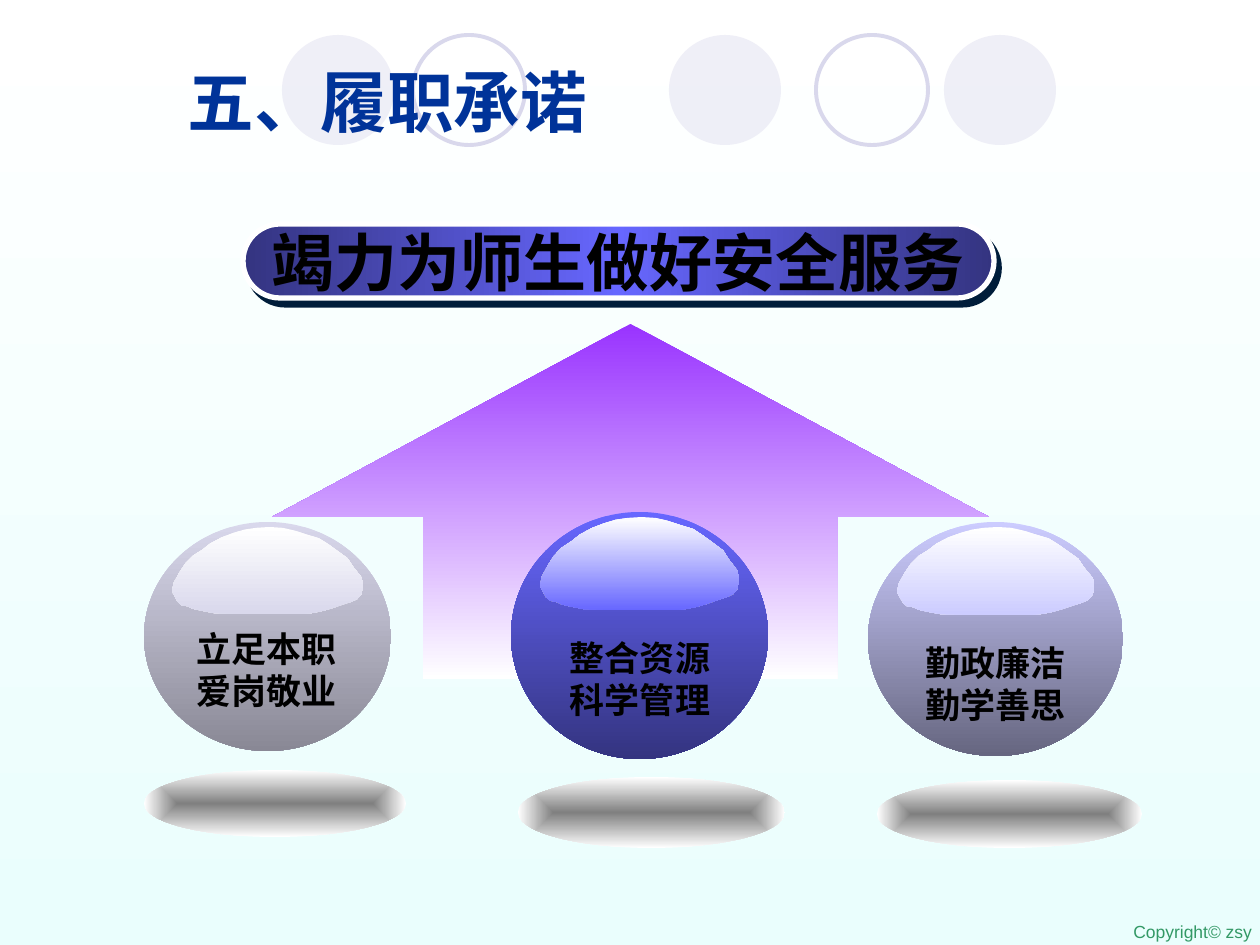
from dataclasses import dataclass
from typing import NamedTuple

from lxml.etree import SubElement
from pptx import Presentation
from pptx.dml.color import RGBColor as RGB
from pptx.enum.shapes import MSO_SHAPE as SHAPE
from pptx.enum.text import MSO_ANCHOR as ANCHOR, MSO_AUTO_SIZE as AUTO_SIZE, PP_ALIGN as ALIGN
from pptx.oxml.ns import qn
from pptx.util import Emu, Pt

EMU_PER_PX = 914400 / 126


@dataclass(frozen=True)
class Theme:
    latin: str = "Arial"
    chinese: str = "Noto Sans CJK SC"
    title_size: int = 38
    banner_size: int = 36
    label_size: int = 20
    footer_size: int = 10
    title: str = "003399"
    text: str = "000000"
    footer: str = "339966"
    circle: str = "D9D8EC"
    white: str = "FFFFFF"
    banner_shadow: str = "001D3A"
    background: tuple = ("FFFFFF", "EAFEFD")
    banner: tuple = ("343480", "6767FF", "343480")
    arrow: tuple = ("9933FF", "FFFFFF")
    floor_shadow: tuple = ("808080", "FFFFFF")
    grey_ball: tuple = ("D9D8EC", "898895")
    blue_ball: tuple = ("6767FF", "343480")
    lilac_ball: tuple = ("CCCCFF", "666680")


THEME = Theme()


class Box(NamedTuple):
    left: int
    top: int
    width: int
    height: int

    def inner(self, left, top, width, height):
        return Box(self.left + left, self.top + top, width, height)

    def emu(self):
        return [px(length) for length in self]


# Highlight outline, in percent of its box
GLOSS = [
    (99, 57), (100, 62), (100, 72), (99, 78), (97, 83), (94, 86), (91, 88), (87, 91),
    (83, 94), (78, 97), (73, 99), (68, 100), (36, 100), (22, 99), (15, 96), (11, 94),
    (8, 91), (5, 90), (3, 86), (1, 78), (0, 74), (1, 64), (4, 52), (7, 42),
    (11, 33), (16, 26), (20, 19), (26, 12), (32, 7), (38, 3), (44, 1), (51, 0),
    (58, 1), (64, 4), (71, 9), (77, 13), (82, 20), (87, 28), (92, 36), (95, 46),
]


def px(length):
    return Emu(round(length * EMU_PER_PX))


def set_gradient(fill, element, colors, angle=90, from_center=False):
    """Spread the colors evenly along an angle or outward from the centre."""
    fill.gradient()
    gradient = element.find(".//" + qn("a:gradFill"))
    for child in list(gradient):
        gradient.remove(child)
    stops = SubElement(gradient, qn("a:gsLst"))
    for index, color in enumerate(colors):
        position = round(100000 * index / (len(colors) - 1))
        stop = SubElement(stops, qn("a:gs"), pos=str(position))
        SubElement(stop, qn("a:srgbClr"), val=color)
    if from_center:
        center = SubElement(gradient, qn("a:path"), path="shape")
        SubElement(center, qn("a:fillToRect"), l="50000", t="50000", r="50000", b="50000")
    else:
        SubElement(gradient, qn("a:lin"), ang=str(angle * 60000), scaled="0")


def plain(shape):
    shape.shadow.inherit = False
    shape.line.fill.background()
    return shape


def add_gradient_shape(slide, kind, box, colors, **direction):
    shape = plain(slide.shapes.add_shape(kind, *box.emu()))
    set_gradient(shape.fill, shape._element, colors, **direction)
    return shape


def write(frame, lines, size, color, font=THEME.latin, bold=True, align=ALIGN.LEFT):
    frame.text = "\n".join(lines)
    for paragraph in frame.paragraphs:
        paragraph.alignment = align
        paragraph.font.size = Pt(size)
        paragraph.font.bold = bold
        paragraph.font.color.rgb = RGB.from_string(color)
        paragraph.font.name = font
        properties = paragraph._p.pPr.find(qn("a:defRPr"))
        SubElement(properties, qn("a:ea"), typeface=THEME.chinese)


def add_text(slide, box, lines, size, color, wrap=True, **style):
    frame = slide.shapes.add_textbox(*box.emu()).text_frame
    frame.word_wrap = wrap
    write(frame, lines, size, color, **style)


def add_header(slide, box):
    # Row of filled and outlined circles
    color = RGB.from_string(THEME.circle)
    for left, filled in [(387, True), (662, True), (0, True), (534, False), (131, False)]:
        circle = plain(slide.shapes.add_shape(SHAPE.OVAL, *box.inner(left, 0, 112, 110).emu()))
        if filled:
            circle.fill.solid()
            circle.fill.fore_color.rgb = color
            tint = circle._element.spPr.find(qn("a:solidFill"))[0]
            SubElement(tint, qn("a:alpha"), val="40000")
        else:
            circle.fill.background()
            circle.line.color.rgb = color
            circle.line.width = Pt(2.25)

    # Title, brought in front of the circles
    title = slide.shapes.title
    title.left, title.top, title.width, title.height = box.inner(-107, 21, 1053, 90).emu()
    title.text_frame.vertical_anchor = ANCHOR.MIDDLE
    title.text_frame.auto_size = AUTO_SIZE.NONE
    write(title.text_frame, ["五、履职承诺"], THEME.title_size, THEME.title, font=THEME.chinese)
    slide.shapes.element.append(title._element)


def add_banner(slide, box):
    banner = add_gradient_shape(slide, SHAPE.ROUNDED_RECTANGLE, box, THEME.banner, angle=0)
    banner.adjustments[0] = 0.5
    banner.line.color.rgb = RGB.from_string(THEME.white)
    banner.line.width = Pt(3)
    effects = banner._element.spPr.find(qn("a:effectLst"))
    shadow = SubElement(effects, qn("a:outerShdw"), blurRad="0", dist=str(Pt(5)),
                        dir=str(53 * 60000), algn="ctr", rotWithShape="0")
    SubElement(shadow, qn("a:srgbClr"), val=THEME.banner_shadow)
    frame = banner.text_frame
    frame.word_wrap = False
    frame.vertical_anchor = ANCHOR.MIDDLE
    write(frame, ["竭力为师生做好安全服务"], THEME.banner_size, THEME.text, align=ALIGN.CENTER)


def add_arrow(slide, box):
    arrow = add_gradient_shape(slide, SHAPE.UP_ARROW, box, THEME.arrow)
    arrow.adjustments[0] = 0.578
    arrow.adjustments[1] = 0.544


def add_ball(slide, box, colors, shadow, label, lines, align=ALIGN.CENTER):
    """Glossy ball; shadow and label are boxes relative to the ball."""
    add_gradient_shape(slide, SHAPE.OVAL, box, colors)

    # Highlight
    gloss = box.inner(round(box.width * 0.113), round(box.height * 0.02),
                      round(box.width * 0.773), round(box.height * 0.378))
    scale = (gloss.width * EMU_PER_PX / 100, gloss.height * EMU_PER_PX / 100)
    builder = slide.shapes.build_freeform(*GLOSS[0], scale=scale)
    builder.add_line_segments(GLOSS[1:], close=True)
    highlight = plain(builder.convert_to_shape(px(gloss.left), px(gloss.top)))
    set_gradient(highlight.fill, highlight._element, (THEME.white, colors[0]))

    # Floor shadow and label
    add_gradient_shape(slide, SHAPE.OVAL, box.inner(*shadow), THEME.floor_shadow, from_center=True)
    add_text(slide, box.inner(*label), lines, THEME.label_size, THEME.text, align=align)


def main():
    presentation = Presentation()
    presentation.slide_width, presentation.slide_height = px(1260), px(945)
    slide = presentation.slides.add_slide(presentation.slide_layouts[5])
    set_gradient(slide.background.fill, slide._element, THEME.background)

    add_header(slide, Box(282, 35, 774, 110))
    add_text(slide, Box(1121, 915, 144, 34), ["Copyright© zsy"], THEME.footer_size,
             THEME.footer, wrap=False, bold=False)
    add_arrow(slide, Box(272, 324, 717, 355))
    add_banner(slide, Box(243, 224, 751, 74))
    add_ball(slide, Box(144, 522, 247, 229), THEME.grey_ball, (0, 248, 262, 67),
             (40, 99, 186, 97), ["立足本职", "爱岗敬业"], ALIGN.LEFT)
    add_ball(slide, Box(868, 522, 255, 234), THEME.lilac_ball, (9, 258, 265, 68),
             (13, 113, 229, 97), ["勤政廉洁", "勤学善思"])
    add_ball(slide, Box(511, 512, 257, 247), THEME.blue_ball, (7, 265, 267, 71),
             (13, 118, 232, 97), ["整合资源", "科学管理"])

    presentation.save("out.pptx")


if __name__ == "__main__":
    main()
